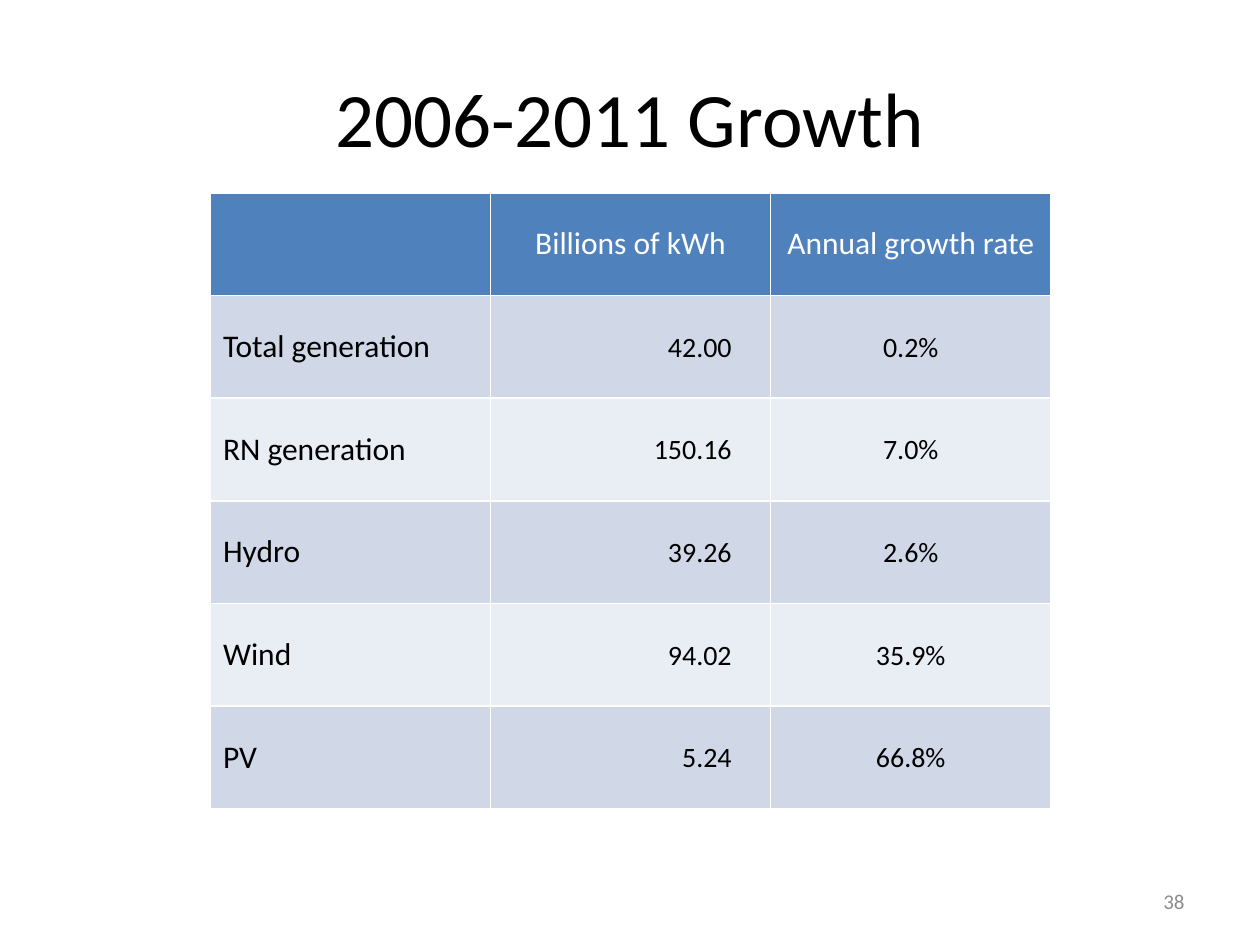
from pptx import Presentation, util as u
from pptx.dml.color import RGBColor
from pptx.enum import text

TITLE = "2006-2011 Growth"
PAGE_NUMBER = "38"
HEADER = ("", "Billions of kWh", "Annual growth rate")
ROWS = [
    ("Total generation", "42.00", "0.2%"),
    ("RN generation", "150.16", "7.0%"),
    ("Hydro", "39.26", "2.6%"),
    ("Wind", "94.02", "35.9%"),
    ("PV", "5.24", "66.8%"),
]
THEME = {
    "font": "Calibri",
    "title_size": 44, "label_size": 18, "value_size": 16, "page_size": 12,
    "ink": "000000", "header_ink": "FFFFFF", "page_ink": "8C8C8C",
    "header_fill": "4F81BD", "bands": ("D0D8E8", "E9EDF4"),
}
TABLE_BOX = (1.67, 1.53, 6.67, 4.89)
VALUE_MARGIN = 0.01
NUMBER_RIGHT_MARGIN = 0.31
ALIGN = text.PP_ALIGN
COLUMN_ALIGNS = (ALIGN.LEFT, ALIGN.RIGHT, ALIGN.CENTER)


def place(shape, left, top, width, height):
    shape.left, shape.top = u.Inches(left), u.Inches(top)
    shape.width, shape.height = u.Inches(width), u.Inches(height)


def write(frame, content, size, color, align):
    frame.text = content
    paragraph = frame.paragraphs[0]
    paragraph.alignment = align
    for run in paragraph.runs:
        run.font.name = THEME["font"]
        run.font.size = u.Pt(size)
        run.font.bold = False
        run.font.color.rgb = RGBColor.from_string(color)


def style_cell(cell, content, row, column):
    is_header = row == 0
    is_value = not is_header and column > 0
    fill = THEME["header_fill"] if is_header else THEME["bands"][(row - 1) % 2]
    cell.fill.solid()
    cell.fill.fore_color.rgb = RGBColor.from_string(fill)
    cell.vertical_anchor = text.MSO_ANCHOR.MIDDLE
    if is_value:
        cell.margin_left = cell.margin_right = cell.margin_top = u.Inches(VALUE_MARGIN)
        cell.margin_bottom = 0
        if COLUMN_ALIGNS[column] == ALIGN.RIGHT:
            cell.margin_right = u.Inches(NUMBER_RIGHT_MARGIN)
    write(
        cell.text_frame, content,
        THEME["value_size" if is_value else "label_size"],
        THEME["header_ink" if is_header else "ink"],
        ALIGN.CENTER if is_header else COLUMN_ALIGNS[column],
    )


def add_growth_table(slide):
    records = [HEADER, *ROWS]
    frame = slide.shapes.add_table(
        len(records), len(HEADER), *(u.Inches(value) for value in TABLE_BOX))
    for row, record in enumerate(records):
        for column, content in enumerate(record):
            style_cell(frame.table.cell(row, column), content, row, column)


def main():
    presentation = Presentation()
    presentation.slide_width, presentation.slide_height = u.Inches(10), u.Inches(7.5)
    slide = presentation.slides.add_slide(presentation.slide_layouts.get_by_name("Title Only"))

    title = slide.shapes.title
    place(title, 0.5, 0.3, 9, 1.25)
    title.text_frame.vertical_anchor = text.MSO_ANCHOR.MIDDLE
    write(title.text_frame, TITLE, THEME["title_size"], THEME["ink"], ALIGN.CENTER)

    add_growth_table(slide)

    page = slide.shapes.add_textbox(0, 0, 0, 0)
    place(page, 7.17, 6.95, 2.33, 0.4)
    page.text_frame.word_wrap = True
    page.text_frame.vertical_anchor = text.MSO_ANCHOR.MIDDLE
    write(page.text_frame, PAGE_NUMBER, THEME["page_size"], THEME["page_ink"], ALIGN.RIGHT)

    presentation.save("out.pptx")


if __name__ == "__main__":
    main()
